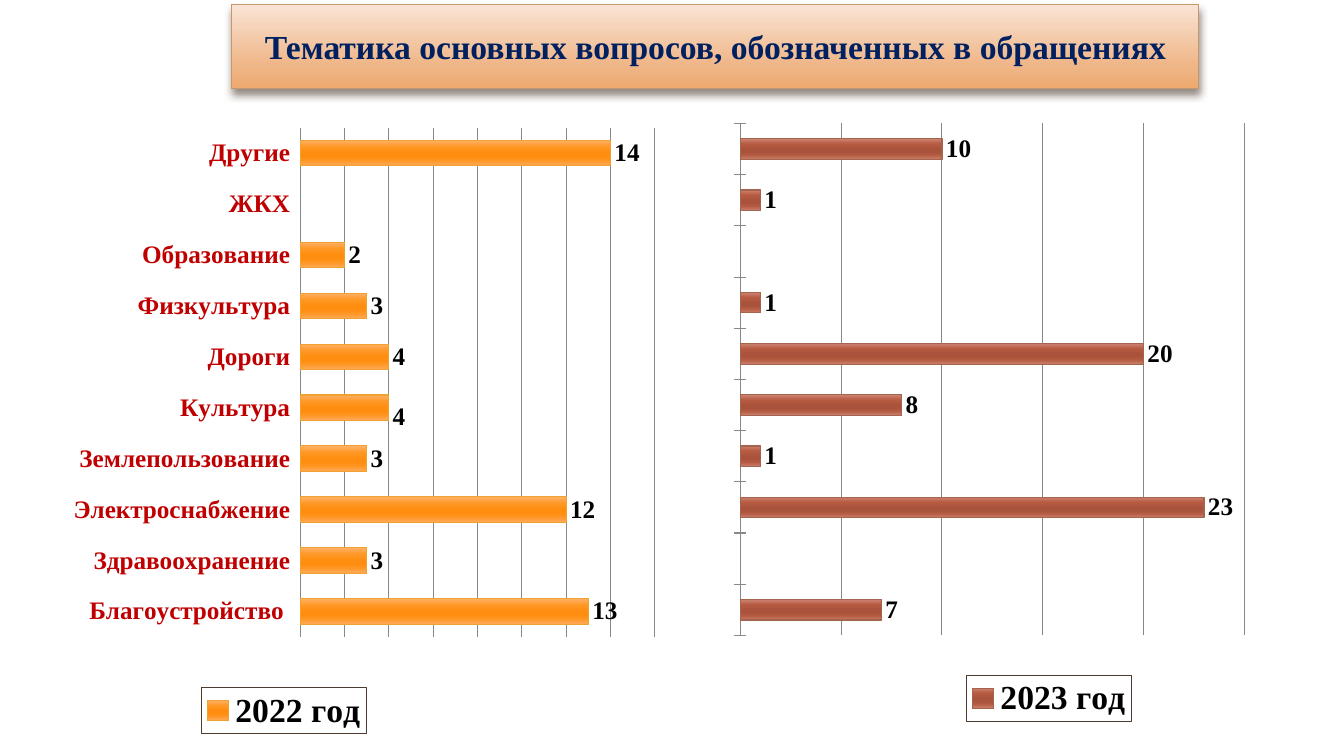
from lxml import etree
from pptx import Presentation, util as u
from pptx.chart import data
from pptx.dml import color as dml
from pptx.enum import chart as ch, text
from pptx.oxml import ns, parse_xml

SERIF = "Times New Roman"
TOPICS = ["Благоустройство ", "Здравоохранение", "Электроснабжение", "Землепользование", "Культура",
          "Дороги", "Физкультура", "Образование", "ЖКХ", "Другие"]
ORANGE = [(0, "FFB16A"), (25, "FF9826"), (50, "FF8D0F"), (65, "FF8D0F"), (80, "FF9724"), (100, "FFAA5C")]
BRICK = [(0, "CD8473"), (25, "B75B42"), (50, "AA533C"), (65, "AA533C"), (80, "B65B42"), (100, "C77D6B")]
PEACH = [(0, "FAE4D5"), (72, "EFB688"), (100, "EFAA6F")]


def rgb(value):
    return dml.RGBColor.from_string(value)


def set_font(font, size=18, color="000000", bold=True, name=SERIF):
    font.size, font.bold, font.name = u.Pt(size), bold, name
    font.color.rgb = rgb(color)


def set_gradient(item, element, stops):
    item.fill.gradient()
    item.fill.gradient_angle = 270
    stop_list = next(element.iter(ns.qn("a:gsLst")))
    for stop in list(stop_list):
        stop_list.remove(stop)
    for percent, value in stops:
        stop = etree.SubElement(stop_list, ns.qn("a:gs"), pos=str(percent * 1000))
        etree.SubElement(stop, ns.qn("a:srgbClr"), val=value)


def set_line(line, color, width=0.79):
    line.color.rgb = rgb(color)
    line.width = u.Pt(width)


def manual_layout(inner=False, **fractions):
    layout = etree.Element(ns.qn("c:layout"))
    manual = etree.SubElement(layout, ns.qn("c:manualLayout"))
    if inner:
        etree.SubElement(manual, ns.qn("c:layoutTarget"), val="inner")
    if "w" in fractions:
        for mode in ("xMode", "yMode"):
            etree.SubElement(manual, ns.qn(f"c:{mode}"), val="edge")
    for key, value in fractions.items():
        etree.SubElement(manual, ns.qn(f"c:{key}"), val=str(value))
    return layout


def chart_format(fill, line):
    return parse_xml(f'<c:spPr {ns.nsdecls("c", "a")}>{fill}<a:ln w="9525">{line}</a:ln></c:spPr>')


def drop_layout(element):
    for layout in element.findall(ns.qn("c:layout")):
        element.remove(layout)


class TopicSlide:
    """Holds the slide and draws its title and bar charts in one style."""

    def __init__(self, presentation):
        self.slide = presentation.slides.add_slide(presentation.slide_layouts[5])
        self.grid = "888888"
        self.dark = "4E3B30"

    def title(self, wording, left, top, width, height):
        shape = self.slide.shapes.title
        shape.left, shape.top, shape.width, shape.height = map(u.Inches, (left, top, width, height))
        set_gradient(shape, shape._element.spPr, PEACH)
        set_line(shape.line, "C3986D")
        shape.shadow.inherit = False
        effects = shape._element.spPr.find(ns.qn("a:effectLst"))
        shadow = etree.SubElement(effects, ns.qn("a:outerShdw"), blurRad=str(u.Pt(6)), dist=str(u.Pt(4)),
                                  dir="5400000", algn="ctr", rotWithShape="0")
        shade = etree.SubElement(shadow, ns.qn("a:srgbClr"), val=self.dark)
        etree.SubElement(shade, ns.qn("a:alpha"), val="60000")
        frame = shape.text_frame
        frame.word_wrap = True
        frame.auto_size = text.MSO_AUTO_SIZE.SHAPE_TO_FIT_TEXT
        frame.vertical_anchor = text.MSO_ANCHOR.MIDDLE
        paragraph = frame.paragraphs[0]
        paragraph.alignment = text.PP_ALIGN.CENTER
        run = paragraph.add_run()
        run.text = wording
        set_font(run.font, 24, "002060")

    def bars(self, box, name, topics, values, stops, outline, gap, maximum, step, plot_box, legend_box):
        chart_data = data.CategoryChartData()
        chart_data.categories = topics
        chart_data.add_series(name, values)
        chart = self.slide.shapes.add_chart(
            ch.XL_CHART_TYPE.BAR_CLUSTERED, *map(u.Inches, box), chart_data).chart
        set_font(chart.font, bold=False, name="Roboto")
        chart.has_title = False
        space = chart._chartSpace.find(ns.qn("c:chart"))
        space.addnext(chart_format("<a:noFill/>", "<a:noFill/>"))
        plot_area = space.find(ns.qn("c:plotArea"))
        drop_layout(plot_area)
        plot_area.insert(0, manual_layout(True, **plot_box))

        plot = chart.plots[0]
        plot.gap_width, plot.vary_by_categories = gap, False
        series = plot.series[0]
        set_gradient(series.format, series._element, stops)
        set_line(series.format.line, outline)
        labels = series.data_labels
        labels.show_value = True
        labels.position = ch.XL_LABEL_POSITION.OUTSIDE_END
        set_font(labels.font)

        axis = chart.value_axis
        axis.minimum_scale, axis.maximum_scale, axis.major_unit = 0, maximum, step
        axis.has_major_gridlines, axis.visible = True, False
        set_line(axis.major_gridlines.format.line, self.grid, 0.75)
        axis = chart.category_axis
        axis.major_tick_mark = ch.XL_TICK_MARK.CROSS
        set_font(axis.tick_labels.font, color="C00000")
        set_line(axis.format.line, self.grid, 0.75)
        self.legend(chart, legend_box)
        return chart

    def legend(self, chart, legend_box):
        chart.has_legend = True
        legend = chart.legend
        legend.position = ch.XL_LEGEND_POSITION.RIGHT
        legend.include_in_layout = False
        set_font(legend.font, 24)
        element = legend._element
        drop_layout(element)
        element.find(ns.qn("c:legendPos")).addnext(manual_layout(**legend_box))
        border = f'<a:solidFill><a:srgbClr val="{self.dark}"/></a:solidFill>'
        element.find(ns.qn("c:txPr")).addprevious(chart_format("<a:noFill/>", border))

    def lower_label(self, chart, index, offset):
        series = chart.plots[0].series[0]
        label = series.points[index].data_label
        label.position = ch.XL_LABEL_POSITION.OUTSIDE_END
        set_font(label.font)
        entry = next(series._element.iter(ns.qn("c:dLbl")))
        entry.find(ns.qn("c:idx")).addnext(manual_layout(x=0, y=offset))


def main():
    presentation = Presentation()
    presentation.slide_width, presentation.slide_height = u.Inches(13.33), u.Inches(7.5)
    page = TopicSlide(presentation)
    page.title("Тематика основных вопросов, обозначенных в обращениях", 2.3, 0.21, 9.59, 0.5)
    earlier = page.bars(
        (0, 0.68, 7.98, 6.82), "2022 год", TOPICS, [13, 3, 12, 3, 4, 4, 3, 2, None, 14],
        ORANGE, "F0A22E", 100, 16, 2, dict(x=0.373, y=0.086, w=0.441, h=0.741),
        dict(x=0.25, y=0.9, w=0.206, h=0.068))
    earlier.category_axis.format.line.fill.background()
    page.lower_label(earlier, TOPICS.index("Культура"), 0.014)
    page.bars(
        (6.83, 0.59, 6.5, 6.91), "2023 год", [""] * 9 + [" "], [7, None, 23, 1, 8, 20, 1, None, 1, 10],
        BRICK, "A5644E", 150, 25, 5, dict(x=0.079, y=0.092, w=0.769, h=0.735),
        dict(x=0.424, y=0.884, w=0.252, h=0.066))
    presentation.save("out.pptx")


if __name__ == "__main__":
    main()
